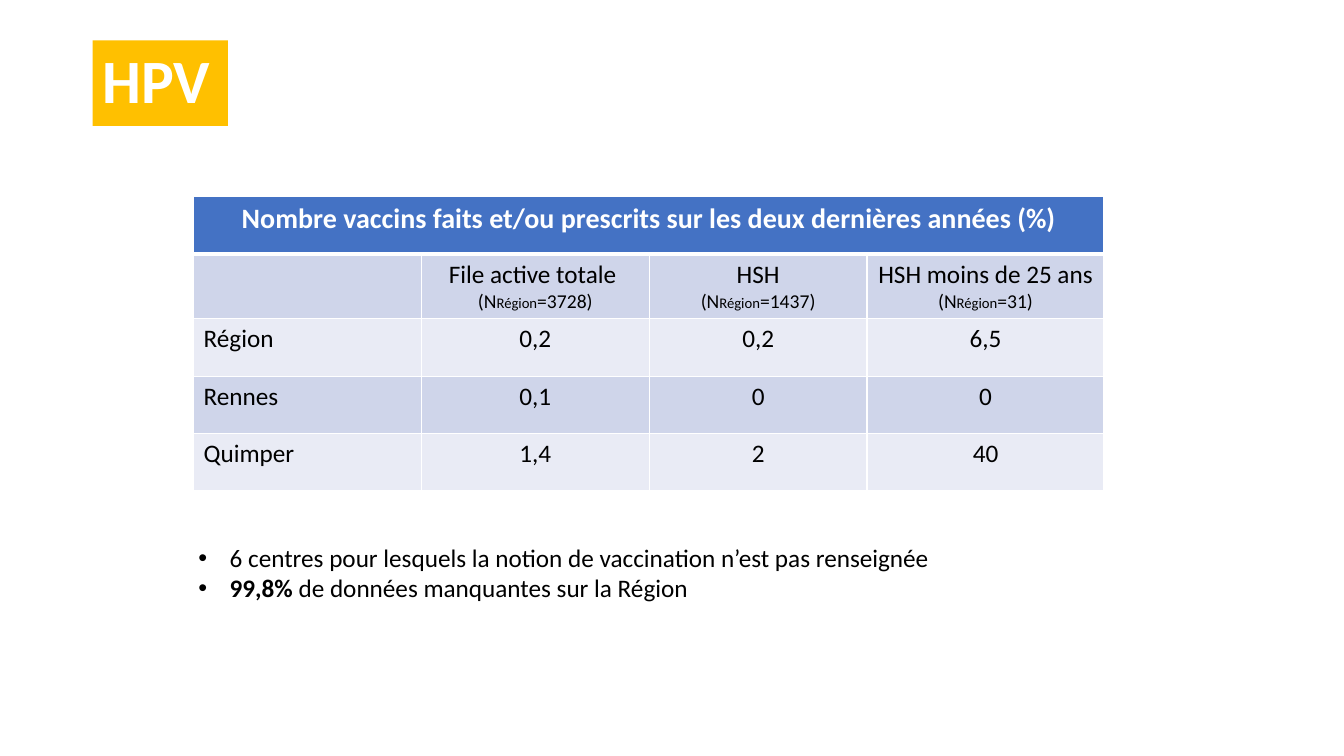
from dataclasses import dataclass

from lxml import etree
from pptx import Presentation
from pptx.dml.color import RGBColor
from pptx.enum.shapes import MSO_SHAPE
from pptx.enum.text import MSO_ANCHOR, PP_ALIGN
from pptx.oxml.ns import qn
from pptx.util import Inches, Pt

RECTANGLE = MSO_SHAPE.RECTANGLE
TOP, MIDDLE = MSO_ANCHOR.TOP, MSO_ANCHOR.MIDDLE
LEFT, CENTER = PP_ALIGN.LEFT, PP_ALIGN.CENTER


@dataclass(frozen=True)
class Theme:
    font: str = "Calibri"
    white: str = "FFFFFF"
    black: str = "000000"
    gold: str = "FFC000"
    blue: str = "4472C4"
    bands: tuple = ("CFD5EA", "E9EBF5")
    title: float = 44
    heading: float = 20
    body: float = 18
    note: float = 14
    subscript: float = 10.5
    thin: float = 1
    thick: float = 3


THEME = Theme()

COLUMN_WIDTHS = (2.26, 2.26, 2.16, 2.35)
ROW_HEIGHT = 0.57
TABLE_TITLE = "Nombre vaccins faits et/ou prescrits sur les deux dernières années (%)"
GROUPS = (("File active totale ", 3728), ("HSH", 1437), ("HSH moins de 25 ans", 31))
RESULTS = (
    ("Région", "0,2", "0,2", "6,5"),
    ("Rennes", "0,1", "0", "0"),
    ("Quimper", "1,4", "2", "40"),
)


def add_text(paragraph, text, size=THEME.body, color=THEME.black, bold=False, align=LEFT):
    """Append one formatted run to a paragraph."""
    paragraph.alignment = align
    run = paragraph.add_run()
    run.text = text
    run.font.name = THEME.font
    run.font.size = Pt(size)
    run.font.bold = bold
    run.font.color.rgb = RGBColor.from_string(color)


def add_title(slide, text):
    shape = slide.shapes.add_shape(RECTANGLE, Inches(0.92), Inches(0.4), Inches(1.34), Inches(0.85))
    shape.shadow.inherit = False
    shape.fill.solid()
    shape.fill.fore_color.rgb = RGBColor.from_string(THEME.gold)
    shape.line.fill.background()
    shape.text_frame.vertical_anchor = MIDDLE
    paragraph = shape.text_frame.paragraphs[0]
    paragraph.line_spacing = 0.9
    add_text(paragraph, text, size=THEME.title, color=THEME.white, bold=True)


def style_cell(cell, fill, top=THEME.thin, bottom=THEME.thin, anchor=TOP):
    """Fill a cell and draw its four white borders."""
    cell.vertical_anchor = anchor
    cell.fill.solid()
    cell.fill.fore_color.rgb = RGBColor.from_string(fill)
    properties = cell._tc.get_or_add_tcPr()
    widths = {"a:lnL": THEME.thin, "a:lnR": THEME.thin, "a:lnT": top, "a:lnB": bottom}
    for index, (tag, width) in enumerate(widths.items()):
        border = etree.Element(qn(tag), w=str(Pt(width)))
        solid = etree.SubElement(border, qn("a:solidFill"))
        etree.SubElement(solid, qn("a:srgbClr"), val=THEME.white)
        properties.insert(index, border)


def add_group_heading(cell, name, count):
    add_text(cell.text_frame.paragraphs[0], name, align=CENTER)
    paragraph = cell.text_frame.add_paragraph()
    parts = (("(N", THEME.note), ("Région", THEME.subscript), (f"={count})", THEME.note))
    for text, size in parts:
        add_text(paragraph, text, size=size, align=CENTER)


def add_results_table(slide):
    row_count = len(RESULTS) + 2
    table = slide.shapes.add_table(
        row_count, len(COLUMN_WIDTHS), Inches(1.92), Inches(1.95),
        Inches(sum(COLUMN_WIDTHS)), Inches(ROW_HEIGHT * row_count),
    ).table
    for column, width in zip(table.columns, COLUMN_WIDTHS):
        column.width = Inches(width)
    for row in table.rows:
        row.height = Inches(ROW_HEIGHT)

    # Title row across all columns
    for cell in table.rows[0].cells:
        style_cell(cell, THEME.blue, bottom=THEME.thick)
    title_cell = table.cell(0, 0)
    title_cell.merge(table.cell(0, len(COLUMN_WIDTHS) - 1))
    add_text(title_cell.text_frame.paragraphs[0], TABLE_TITLE,
             size=THEME.heading, color=THEME.white, bold=True, align=CENTER)

    # Group headings
    for cell in table.rows[1].cells:
        style_cell(cell, THEME.bands[0], top=THEME.thick, anchor=MIDDLE)
    for column, (name, count) in enumerate(GROUPS, start=1):
        add_group_heading(table.cell(1, column), name, count)

    # Results by place
    for row, values in enumerate(RESULTS, start=2):
        for column, value in enumerate(values):
            cell = table.cell(row, column)
            style_cell(cell, THEME.bands[(row - 1) % 2])
            add_text(cell.text_frame.paragraphs[0], value, align=CENTER if column else LEFT)


def add_bullet(paragraph):
    properties = paragraph._p.get_or_add_pPr()
    indent = Inches(0.31)
    properties.set("marL", str(indent))
    properties.set("indent", str(-indent))
    etree.SubElement(properties, qn("a:buFont"), typeface="Arial")
    etree.SubElement(properties, qn("a:buChar"), char="•")


def add_remarks(slide):
    box = slide.shapes.add_textbox(Inches(1.87), Inches(5.33), Inches(8.43), Inches(0.71))
    frame = box.text_frame
    frame.word_wrap = True
    first, second = frame.paragraphs[0], frame.add_paragraph()
    for paragraph in (first, second):
        add_bullet(paragraph)
    add_text(first, "6 centres pour lesquels la notion de vaccination n’est pas renseignée")
    add_text(second, "99,8% ", bold=True)
    add_text(second, "de données manquantes sur la Région")


def main():
    presentation = Presentation()
    presentation.slide_width = Inches(13.33)
    presentation.slide_height = Inches(7.5)
    slide = presentation.slides.add_slide(presentation.slide_layouts[6])
    add_title(slide, "HPV")
    add_results_table(slide)
    add_remarks(slide)
    presentation.save("out.pptx")


if __name__ == "__main__":
    main()
